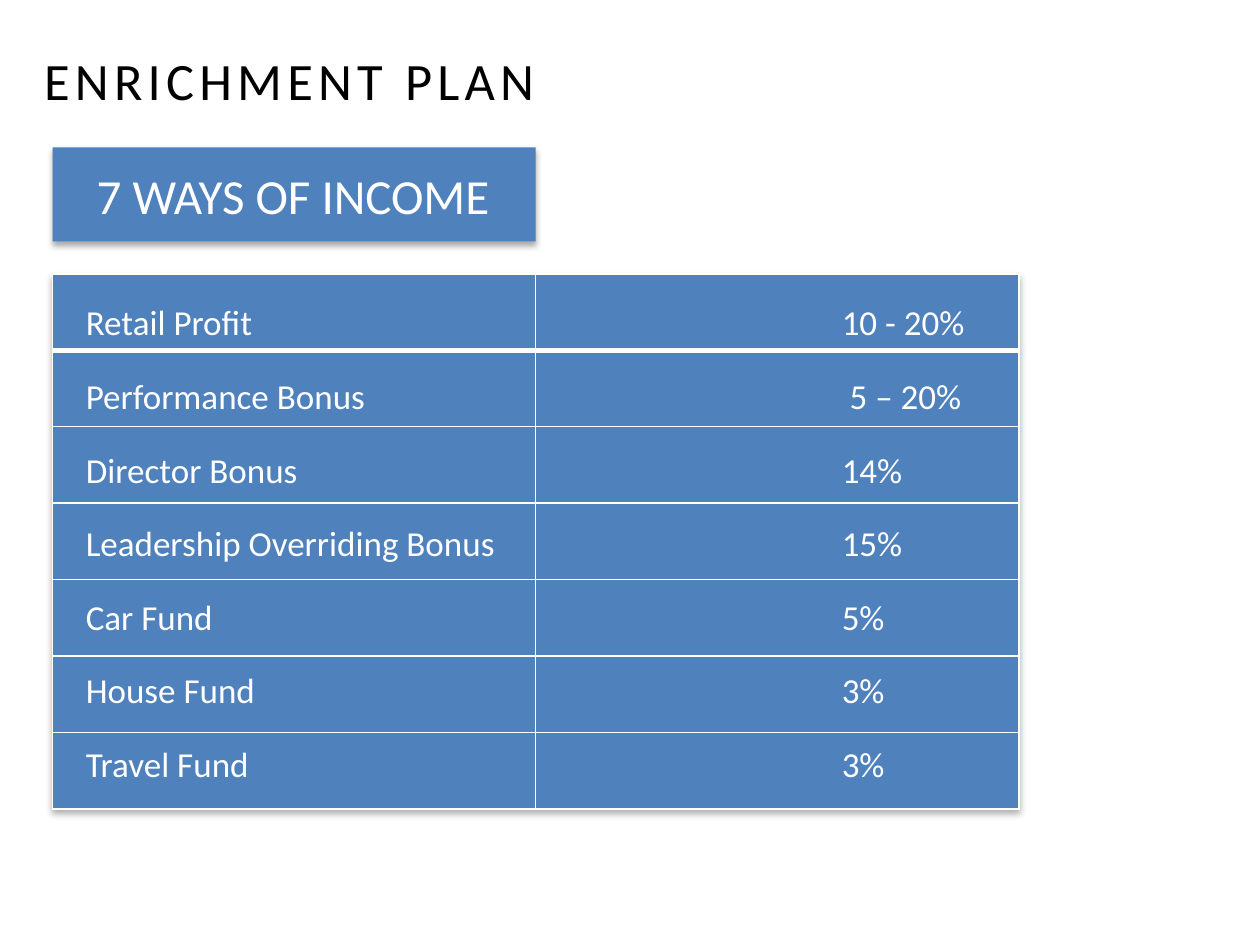
from dataclasses import dataclass

from lxml import etree
from pptx import Presentation
from pptx.dml.color import RGBColor
from pptx.enum import shapes, text
from pptx.oxml import ns
from pptx.util import Cm, Pt


@dataclass(frozen=True)
class Theme:
    blue: RGBColor = RGBColor(0x4F, 0x81, 0xBD)
    white: RGBColor = RGBColor(0xFF, 0xFF, 0xFF)
    black: RGBColor = RGBColor(0, 0, 0)
    font: str = "Calibri"
    title: int = 30
    banner: int = 28
    body: int = 20


THEME = Theme()
ROWS = [
    ("Retail Profit", "10 - 20%"),
    ("Performance Bonus", " 5 – 20%"),
    ("Director Bonus", "14%"),
    ("Leadership Overriding Bonus", "15%"),
    ("Car Fund", "5%"),
    ("House Fund", "3%"),
    ("Travel Fund", "3%"),
]


def add_node(parent, tag, **attrs):
    node = etree.SubElement(parent, ns.qn(tag))
    for name, value in attrs.items():
        node.set(name, str(value))
    return node


def make_shade():
    shade = etree.Element(ns.qn("a:effectLst"))
    outer = add_node(shade, "a:outerShdw", blurRad=Pt(3.5), dist=Pt(2.2),
                     dir=5400000, rotWithShape=0)
    color = add_node(outer, "a:srgbClr", val=THEME.black)
    add_node(color, "a:alpha", val=32000)
    return shade


def style_runs(para, size, color):
    for run in para.runs:
        run.font.name = THEME.font
        run.font.size = Pt(size)
        run.font.color.rgb = color


def add_title(slide, left, top, width, height):
    box = slide.shapes.add_textbox(left, top, width, height)
    box.text_frame.word_wrap = True
    box.text_frame.text = "ENRICHMENT PLAN"
    para = box.text_frame.paragraphs[0]
    style_runs(para, THEME.title, THEME.black)
    para.runs[0].font._element.set("spc", "300")


def add_banner(slide, left, top, width, height):
    box = slide.shapes.add_shape(shapes.MSO_SHAPE.RECTANGLE,
                                 left, top, width, height)
    box.fill.solid()
    box.fill.fore_color.rgb = THEME.blue
    box.line.fill.background()
    box.shadow.inherit = False
    props = box._element.spPr
    props.replace(props.find(ns.qn("a:effectLst")), make_shade())
    frame = box.text_frame
    frame.word_wrap = True
    frame.margin_left = Cm(0.89)
    frame.margin_right = Cm(0.5)
    frame.vertical_anchor = text.MSO_ANCHOR.MIDDLE
    frame.text = "7 WAYS OF INCOME"
    para = frame.paragraphs[0]
    para.alignment = text.PP_ALIGN.LEFT
    style_runs(para, THEME.banner, THEME.white)


def style_cell(cell, top, bottom):
    props = cell._tc.get_or_add_tcPr()
    for side, width in zip("LRTB", (1, 1, top, bottom)):
        line = add_node(props, f"a:ln{side}", w=Pt(width))
        fill = add_node(line, "a:solidFill")
        add_node(fill, "a:srgbClr", val=THEME.white)
    cell.fill.solid()
    cell.fill.fore_color.rgb = THEME.blue


def add_grid(slide, left, top, width, height):
    table = slide.shapes.add_table(len(ROWS), 2, left, top,
                                   width, height).table
    table._tbl.tblPr.insert(0, make_shade())
    for row in range(len(ROWS)):
        for col in range(2):
            style_cell(table.cell(row, col), 3 if row == 1 else 1,
                       3 if row == 0 else 1)


def add_list(slide, left, top, width, height):
    box = slide.shapes.add_textbox(left + Cm(0.42), top, width, height)
    frame = box.text_frame
    frame.word_wrap = True
    for index, (name, rate) in enumerate(ROWS):
        para = frame.add_paragraph() if index else frame.paragraphs[0]
        para.text = f"{name}\t{rate}"
        tabs = add_node(para._p.get_or_add_pPr(), "a:tabLst")
        add_node(tabs, "a:tab", pos=Cm(15.24), algn="l")
        para.line_spacing = 1.5
        para.space_before = Pt(6 if index else 0)
        style_runs(para, THEME.body, THEME.white)


def main():
    deck = Presentation()
    deck.slide_width, deck.slide_height = Cm(25.4), Cm(19.05)
    slide = deck.slides.add_slide(deck.slide_layouts[6])
    left, half = Cm(1.06), Cm(9.74)
    area = left, Cm(5.52), 2 * half, Cm(10.79)
    add_grid(slide, *area)
    add_banner(slide, left, Cm(2.97), half, Cm(1.9))
    add_title(slide, Cm(0.64), Cm(0.85), Cm(15.45), Cm(1.54))
    add_list(slide, *area)
    deck.save("out.pptx")


if __name__ == "__main__":
    main()
